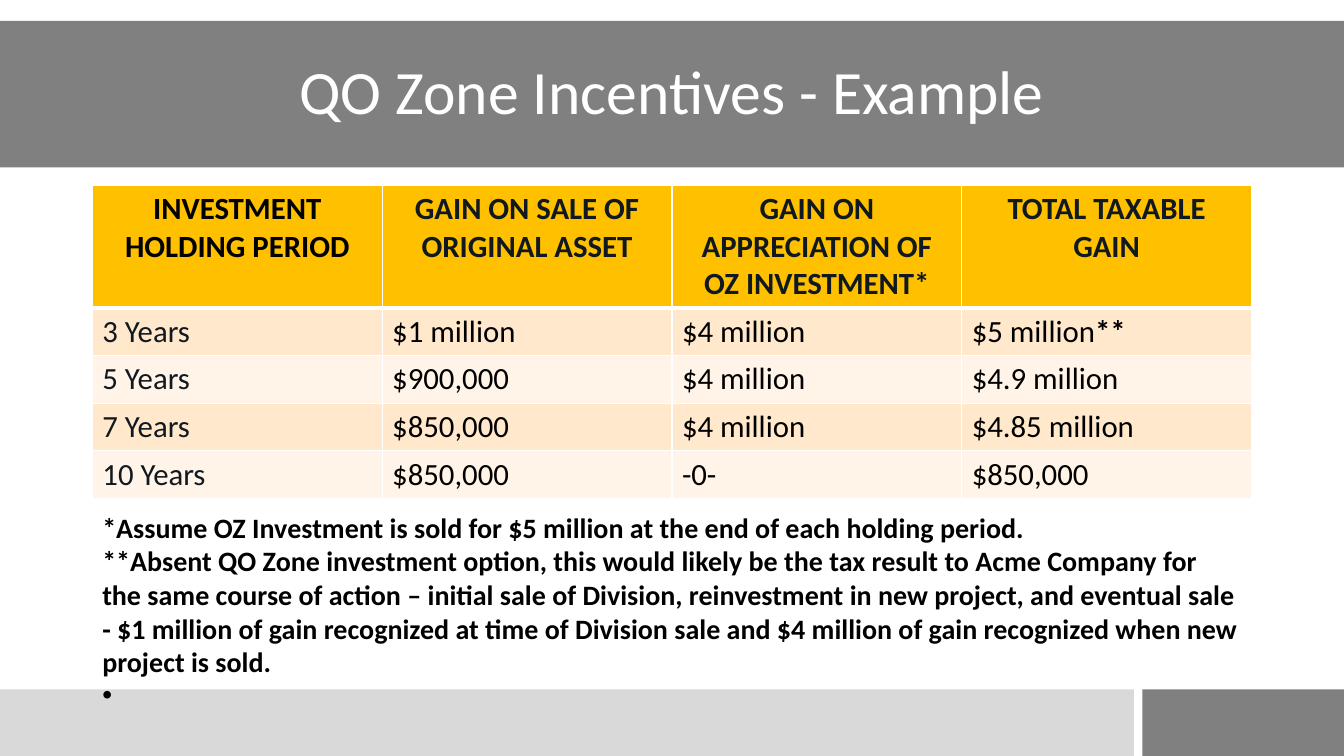
from dataclasses import dataclass

from pptx import Presentation
from pptx.dml.color import RGBColor
from pptx.enum.shapes import MSO_SHAPE
from pptx.enum.text import MSO_ANCHOR, MSO_AUTO_SIZE, PP_ALIGN
from pptx.oxml import parse_xml
from pptx.oxml.ns import nsdecls
from pptx.util import Pt


@dataclass
class Theme:
    font: str = "Calibri"
    white: str = "FFFFFF"
    black: str = "000000"
    ink: str = "101820"
    gray: str = "808080"
    pale: str = "D9D9D9"
    gold: str = "FFC000"
    bands: tuple = ("FFE8CC", "FFF4E7")
    head: int = 44
    cell: int = 22
    note: int = 20


theme = Theme()


def paint(fill, tone):
    fill.solid()
    fill.fore_color.rgb = RGBColor.from_string(tone)


def style(para, size, tone, bold=False):
    font = para.font
    font.name, font.size, font.bold = theme.font, Pt(size), bold
    font.color.rgb = RGBColor.from_string(tone)


deck = Presentation()
deck.slide_width, deck.slide_height = Pt(960), Pt(540)
slide = deck.slides.add_slide(deck.slide_layouts[5])
shapes = slide.shapes

# Footer bars
for left, width, tone in ((0, 810, theme.pale), (816, 144, theme.gray)):
    bar = shapes.add_shape(MSO_SHAPE.RECTANGLE, Pt(left), Pt(492.5),
                           Pt(width), Pt(47.5))
    bar.shadow.inherit = False
    paint(bar.fill, tone)
    bar.line.fill.background()

# Title band
title = shapes.title
title.left, title.top, title.width, title.height = Pt(0), Pt(15), Pt(960), Pt(104.5)
paint(title.fill, theme.gray)
frame = title.text_frame
frame.text = "QO Zone Incentives - Example"
frame.auto_size = MSO_AUTO_SIZE.NONE
frame.vertical_anchor = MSO_ANCHOR.MIDDLE
frame.margin_left = frame.margin_right = Pt(36)
para = frame.paragraphs[0]
para.alignment = PP_ALIGN.CENTER
para.line_spacing = 0.9
style(para, theme.head, theme.white)

# Table of gains
rows = (
    ("INVESTMENT HOLDING PERIOD", "GAIN ON SALE OF ORIGINAL ASSET",
     "GAIN ON APPRECIATION OF OZ INVESTMENT*", "TOTAL TAXABLE GAIN"),
    ("3 Years", "$1 million", "$4 million", "$5 million"),
    ("5 Years", "$900,000", "$4 million", "$4.9 million"),
    ("7 Years", "$850,000", "$4 million", "$4.85 million"),
    ("10 Years", "$850,000", "-0-", "$850,000"),
)
table = shapes.add_table(5, 4, Pt(66), Pt(132.5), Pt(828), Pt(223)).table
for col in table.columns:
    col.width = Pt(207)
for r, row in enumerate(rows):
    top = r == 0
    table.rows[r].height = Pt(87 if top else 34)
    for c, text in enumerate(row):
        cell = table.cell(r, c)
        edges = {"L": 1, "R": 1, "T": 3 if r == 1 else 1, "B": 3 if top else 1}
        for side, weight in edges.items():
            cell._tc.get_or_add_tcPr().append(parse_xml(
                f'<a:ln{side} {nsdecls("a")} w="{Pt(weight)}"><a:solidFill>'
                f'<a:srgbClr val="{theme.white}"/></a:solidFill></a:ln{side}>'))
        paint(cell.fill, theme.gold if top else theme.bands[(r - 1) % 2])
        cell.text = text
        para = cell.text_frame.paragraphs[0]
        if top:
            para.alignment = PP_ALIGN.CENTER
        # Ink marks the header and first column, except the corner
        style(para, theme.cell, theme.ink if top != (c == 0) else theme.black, top)
mark = table.cell(1, 3).text_frame.paragraphs[0].add_run()
mark.text = "**"
mark.font.bold = True

# Notes under the table
notes = (
    "*Assume OZ Investment is sold for $5 million at the end of each holding period.",
    "**Absent QO Zone investment option, this would likely be the tax result to "
    "Acme Company for the same course of action – initial sale of Division, "
    "reinvestment in new project, and eventual sale - $1 million of gain recognized "
    "at time of Division sale and $4 million of gain recognized when new project is sold.",
    " ",
)
frame = shapes.add_textbox(Pt(66), Pt(361), Pt(828), Pt(152.5)).text_frame
frame.word_wrap = True
frame.text = "\n".join(notes)

# Closing bullet
prop = frame.paragraphs[-1]._p.get_or_add_pPr()
prop.set("marL", str(Pt(27)))
prop.set("indent", str(-Pt(27)))
prop.append(parse_xml(f'<a:buFont {nsdecls("a")} typeface="Arial"/>'))
prop.append(parse_xml(f'<a:buChar {nsdecls("a")} char="•"/>'))
for para in frame.paragraphs:
    style(para, theme.note, theme.black, True)

deck.save("out.pptx")
